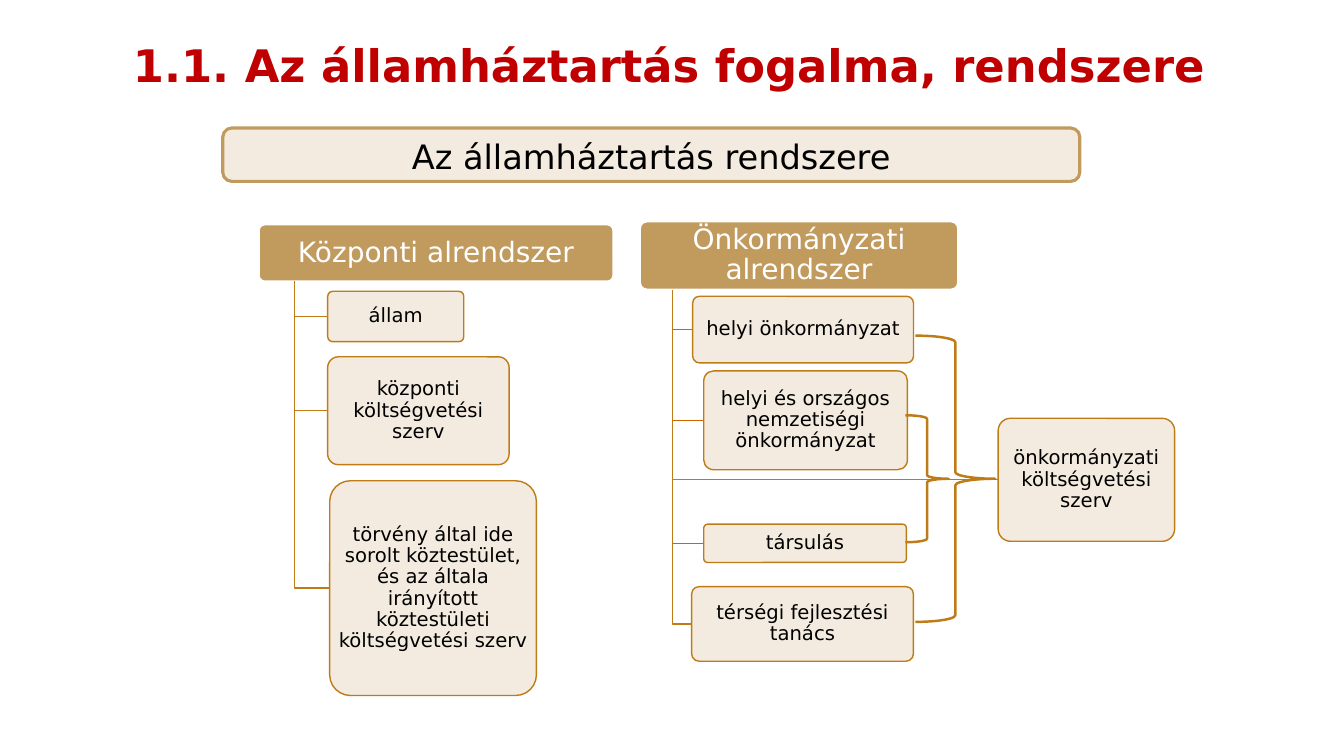
from pptx import Presentation
from pptx.dml.color import RGBColor
from pptx.enum.shapes import MSO_SHAPE as Shape
from pptx.enum.text import MSO_ANCHOR as Anchor, MSO_AUTO_SIZE as AutoSize, PP_ALIGN as Align
from pptx.util import Inches, Pt

RED = RGBColor(0xC0, 0x00, 0x00)
TAN = RGBColor(0xC1, 0x9A, 0x5E)
CREAM = RGBColor(0xF3, 0xEB, 0xDF)
BROWN = RGBColor(0xBF, 0x7B, 0x17)
ORANGE = RGBColor(0xCC, 0x66, 0x00)
BLACK = RGBColor(0x00, 0x00, 0x00)
WHITE = RGBColor(0xFF, 0xFF, 0xFF)

HEADER = {"fill": TAN, "line": WHITE, "size": 20, "color": WHITE,
          "margins": (0.04, 0.03), "corner": 0.1}
MEMBER = {"fill": CREAM, "line": BROWN, "size": 14, "color": BLACK,
          "margins": (0.03, 0.02), "corner": 0.1}
BANNER = {"fill": CREAM, "line": TAN, "width": 2.25, "size": 24, "color": BLACK,
          "margins": (0.1, 0.05), "corner": 0.17, "spacing": 1.07, "after": 8}

# Each subsystem: header text and place, trunk x and top, then its members
# as text, place and branch colour.
SUBSYSTEMS = [
    ("Központi alrendszer", (2.57, 2.23, 3.51, 0.56), (2.92, 2.79), [
        ("állam", (3.25, 2.89, 1.35, 0.5), BROWN),
        ("központi költségvetési szerv", (3.25, 3.54, 1.8, 1.07), BROWN),
        ("törvény által ide sorolt köztestület, és az általa irányított "
         "köztestületi költségvetési szerv", (3.27, 4.77, 2.05, 2.13), BROWN),
    ]),
    ("Önkormányzati alrendszer", (6.35, 2.2, 3.15, 0.67), (6.67, 2.88), [
        ("helyi önkormányzat", (6.87, 2.94, 2.19, 0.66), ORANGE),
        ("helyi és országos nemzetiségi önkormányzat", (6.98, 3.68, 2.02, 0.98), ORANGE),
        ("társulás", (6.98, 5.2, 2.01, 0.38), ORANGE),
        ("térségi fejlesztési tanács", (6.86, 5.82, 2.2, 0.74), BROWN),
        ("önkormányzati költségvetési szerv", (9.9, 4.15, 1.75, 1.22), BROWN),
    ]),
]
BRACES = [(9.08, 3.33, 0.79, 2.84), (8.98, 4.12, 0.43, 1.26)]


class Page:
    font_name = "DejaVu Sans"

    def __init__(self, slide):
        self.shapes = slide.shapes

    def add_text(self, frame, text, size, color, spacing=1.0, after=0, bold=False):
        frame.word_wrap = True
        para = frame.paragraphs[0]
        for name, value in {"alignment": Align.CENTER, "line_spacing": spacing,
                            "space_after": Pt(after)}.items():
            setattr(para, name, value)
        span = para.add_run()
        span.text = text
        span.font.color.rgb = color
        for name, value in {"name": self.font_name, "size": Pt(size), "bold": bold}.items():
            setattr(span.font, name, value)

    def title(self, text, place):
        frame = self.shapes.add_textbox(*map(Inches, place)).text_frame
        self.add_text(frame, text, 32, RED, bold=True)
        frame.auto_size = AutoSize.SHAPE_TO_FIT_TEXT

    def outline(self, shape, color, width):
        shape.shadow.inherit = False
        shape.line.color.rgb = color
        shape.line.width = Pt(width)

    def box(self, text, place, style):
        box = self.shapes.add_shape(Shape.ROUNDED_RECTANGLE, *map(Inches, place))
        box.adjustments[0] = style["corner"]
        box.fill.solid()
        box.fill.fore_color.rgb = style["fill"]
        self.outline(box, style["line"], style.get("width", 1))
        frame = box.text_frame
        across, down = map(Inches, style["margins"])
        for name, value in {"margin_left": across, "margin_right": across,
                            "margin_top": down, "margin_bottom": down,
                            "vertical_anchor": Anchor.MIDDLE}.items():
            setattr(frame, name, value)
        self.add_text(frame, text, style["size"], style["color"],
                      style.get("spacing", 0.9), style.get("after", 0))

    def branch(self, trunk, place, color):
        """Draw an elbow from the trunk's top to the middle of a box's left edge."""
        x, top = map(Inches, trunk)
        left, box_top, _, height = map(Inches, place)
        middle = box_top + height // 2
        builder = self.shapes.build_freeform(x, top)
        builder.add_line_segments([(x, middle), (left, middle)], close=False)
        elbow = builder.convert_to_shape()
        elbow.fill.background()
        self.outline(elbow, color, 1)

    def brace(self, place):
        brace = self.shapes.add_shape(Shape.RIGHT_BRACE, *map(Inches, place))
        brace.fill.background()
        self.outline(brace, BROWN, 1.75)


def main():
    deck = Presentation()
    deck.slide_width, deck.slide_height = Inches(13.33), Inches(7.5)
    page = Page(deck.slides.add_slide(deck.slide_layouts[6]))

    page.title("1.1. Az államháztartás fogalma, rendszere", (1.09, 0.33, 11.1, 0.64))
    for header, header_place, trunk, members in SUBSYSTEMS:
        page.box(header, header_place, HEADER)
        for text, place, color in members:
            page.branch(trunk, place, color)
            page.box(text, place, MEMBER)
    page.box("Az államháztartás rendszere", (2.21, 1.27, 8.5, 0.53), BANNER)
    for place in BRACES:
        page.brace(place)

    deck.save("out.pptx")


if __name__ == "__main__":
    main()
